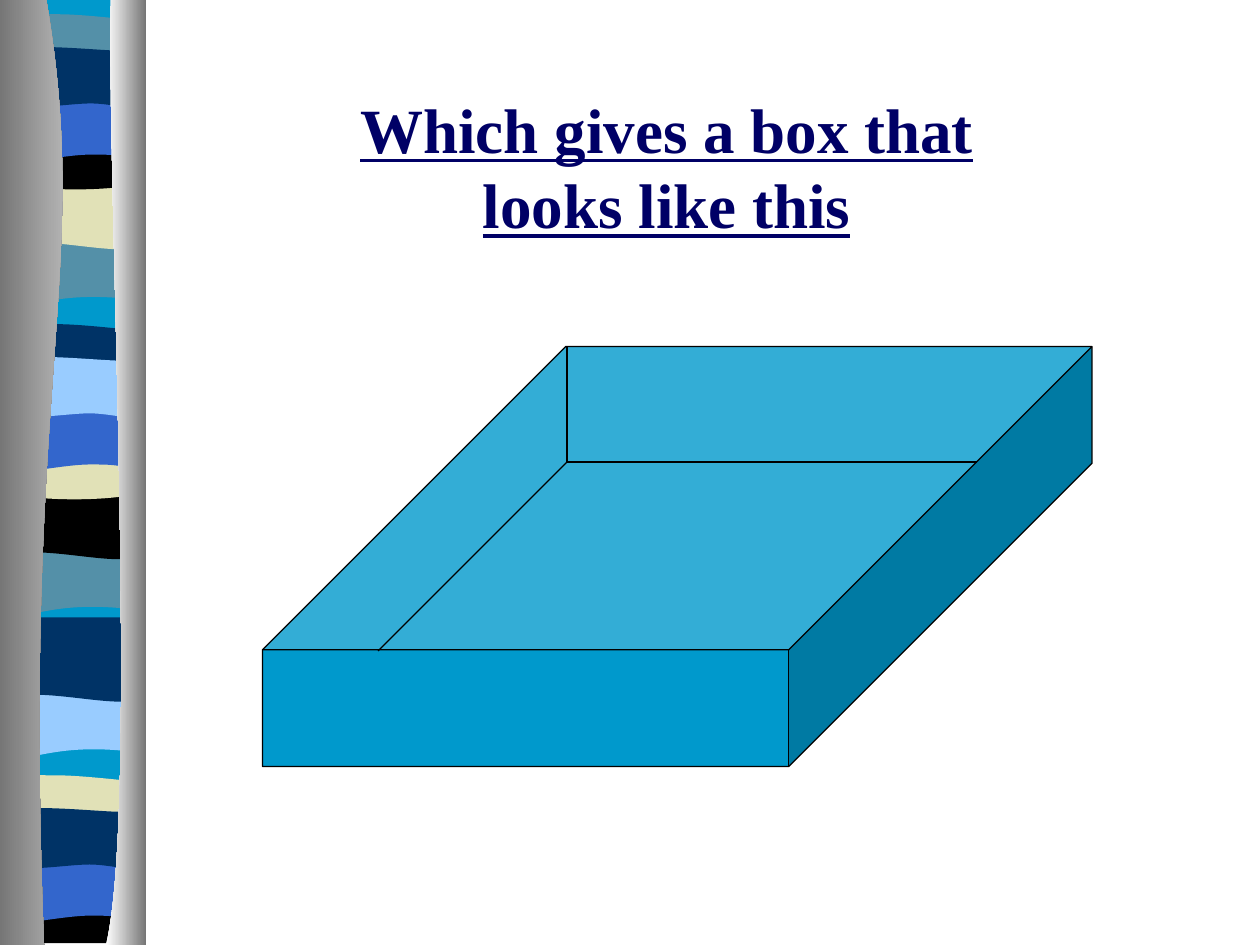
from lxml import etree
from pptx import Presentation
from pptx.dml.color import RGBColor
from pptx.enum.shapes import MSO_CONNECTOR, MSO_SHAPE
from pptx.enum.text import MSO_ANCHOR, MSO_AUTO_SIZE, PP_ALIGN
from pptx.oxml.ns import qn
from pptx.util import Pt

CUBE, STRAIGHT = MSO_SHAPE.CUBE, MSO_CONNECTOR.STRAIGHT
CENTER, TOP = PP_ALIGN.CENTER, MSO_ANCHOR.TOP
GROW = MSO_AUTO_SIZE.SHAPE_TO_FIT_TEXT

COLORS = {
    "cyan": "0099CC", "teal": "5490A8", "sand": "E1E1B7", "black": "000000",
    "blue": "3366CC", "navy": "003366", "sky": "99CCFF", "title": "000066",
    "white": "FFFFFF", "silver": "D0D0D0", "gray": "767676",
}
FONT = "Times New Roman"
SLIDE_W, SLIDE_H = 720, 540
BAND_W = 77.8
BAND_STRETCH = 1.35  # vertical, about the middle of each band

# Band outlines: two numbers are a straight step, six are a Bezier step.
# Each has its offset below the top of its stack.
MOTIFS = {
    "tail": (121.7, [(BAND_W, 0), (BAND_W, 33.8),
                     (23.8, 28.1, 13, 39.6, 0, 33.8), (0, 0)]),
    "ripple": (89.8, [(BAND_W, 0), (BAND_W, 33.8),
                      (64.8, 39.6, 23.8, 29.5, 0, 33.8), (0, 0)]),
    "crest": (0, [(BAND_W, 3.6), (BAND_W, 20.9),
                  (64.8, 24.5, 13, 24.5, 0, 20.9), (0, 3.6),
                  (5, 0, 16.6, 0.7, 29.5, 0.7),
                  (42.5, 0.7, 67.7, 2.9, BAND_W, 3.6)]),
    "bowl": (66, [(BAND_W, 0), (BAND_W, 23),
                  (64.8, 27.4, 13, 27.4, 0, 23), (0, 0),
                  (47.5, 3.6, 61.2, 0, BAND_W, 0)]),
    "arch": (42, [(BAND_W, 0), (BAND_W, 33.8),
                  (65.5, 30.2, 60.5, 30.2, 47.5, 30.2),
                  (34.6, 30.2, 11.5, 33.8, 0, 33.8), (0, 0)]),
    "swell": (17.8, [(BAND_W, 3.6), (BAND_W, 25.9),
                     (72.7, 29.5, 60.5, 25.9, 47.5, 25.9),
                     (34.6, 25.9, 7.9, 29.5, 0, 25.9), (0, 3.6),
                     (10.8, 0, 52.6, 3.6, 65.5, 3.6)]),
}
# left, top, and the colour of each band from back to front
STACKS = [
    (4.3, 11.5, {"tail": "teal", "ripple": "sand", "crest": "teal",
                 "bowl": "black", "arch": "blue", "swell": "navy"}),
    (3.6, 188.6, {"tail": "teal", "ripple": "black", "crest": "navy",
                  "bowl": "sand", "arch": "blue", "swell": "sky"}),
    (4.3, 270, {"tail": "sky", "ripple": "navy"}),
    (3.6, 446.4, {"crest": "sand", "arch": "blue", "swell": "navy"}),
]
BACKDROP = [(BAND_W, 0), (BAND_W, 538.5), (0, 538.5), (0, 0)]
BASE = [(BAND_W, 0), (BAND_W, 26.4), (0, 26.4), (0, 0),
        (47.5, 3.6, 61.2, 0, BAND_W, 0)]
LEFT_PANEL = [(26.5, 0), (53, 155.5, 12.2, 213, 25.2, SLIDE_H),
              (0, SLIDE_H), (0, 0)]
RIGHT_PANEL = [(63.4, 0), (60.5, 90, 79.9, 465, 60.5, SLIDE_H),
               (83.5, SLIDE_H), (83.5, 0)]


def rgb(name):
    return RGBColor.from_string(COLORS[name])


def stretch(steps):
    middle = max(y for step in steps for y in step[1::2]) / 2
    return [tuple(middle + (v - middle) * BAND_STRETCH if i % 2 else v
                  for i, v in enumerate(step)) for step in steps]


def bend(sp, steps):
    """Join each three line segments of a Bezier step into one curve."""
    path = next(sp._element.iter(qn("a:path")))
    segments = iter(path.findall(qn("a:lnTo")))
    for step in steps[1:]:
        segment = next(segments)
        if len(step) == 6:
            curve = etree.Element(qn("a:cubicBezTo"))
            segment.addprevious(curve)
            for part in (segment, next(segments), next(segments)):
                curve.append(part[0])
                path.remove(part)


class Deck:
    def __init__(self):
        self.prs = Presentation()
        self.prs.slide_width, self.prs.slide_height = Pt(SLIDE_W), Pt(SLIDE_H)
        self.slide = None

    def new_slide(self):
        self.slide = self.prs.slides.add_slide(self.prs.slide_layouts[5])

    def title(self, text, left, top, width, height, size):
        sp = self.slide.shapes.title
        sp.left, sp.top, sp.width, sp.height = map(Pt, (left, top, width, height))
        tf = sp.text_frame
        tf.word_wrap, tf.auto_size, tf.vertical_anchor = True, GROW, TOP
        p = tf.paragraphs[0]
        p.alignment, p.line_spacing = CENTER, Pt(1.2 * size)
        r = p.add_run()
        r.text = text
        r.font.name, r.font.size = FONT, Pt(size)
        r.font.bold = r.font.underline = True
        r.font.color.rgb = rgb("title")

    def group(self):
        return self.slide.shapes.add_group_shape()

    def outline(self, group, steps, colors, left=0, top=0):
        """Fill an outline with one colour, or two from left to right."""
        points = [(Pt(left + x), Pt(top + y)) for step in steps
                  for x, y in zip(step[::2], step[1::2])]
        builder = group.shapes.build_freeform(*points[0])
        builder.add_line_segments(points[1:], close=True)
        sp = builder.convert_to_shape()
        bend(sp, steps)
        sp.shadow.inherit = False
        sp.line.fill.background()
        if len(colors) == 1:
            sp.fill.solid()
            sp.fill.fore_color.rgb = rgb(colors[0])
        else:
            sp.fill.gradient()
            sp.fill.gradient_angle = 0
            for stop, color in zip(sp.fill.gradient_stops, colors):
                stop.color.rgb = rgb(color)

    def cube(self, left, top, width, height, depth):
        sp = self.slide.shapes.add_shape(
            CUBE, Pt(left), Pt(top), Pt(width), Pt(height))
        sp.adjustments[0] = depth
        sp.shadow.inherit = False
        sp.fill.solid()
        sp.fill.fore_color.rgb = rgb("cyan")
        self.stroke(sp)

    def line(self, start, end):
        sp = self.slide.shapes.add_connector(
            STRAIGHT, *map(Pt, start), *map(Pt, end))
        self.stroke(sp)
        etree.SubElement(sp._element.spPr, qn("a:effectLst"))

    def stroke(self, sp):
        sp.line.color.rgb = rgb("black")
        sp.line.width = Pt(0.75)


def main():
    deck = Deck()
    deck.new_slide()
    border = deck.group()
    deck.outline(border, BACKDROP, ["cyan"], 4.3)
    deck.outline(border, BASE, ["black"], 3.6, 512.6)
    for left, top, bands in STACKS:
        for motif, color in bands.items():
            offset, steps = MOTIFS[motif]
            deck.outline(border, stretch(steps), [color], left, top + offset)
    deck.outline(border, LEFT_PANEL, ["gray", "silver"])
    deck.outline(border, RIGHT_PANEL, ["white", "gray"])

    deck.cube(150, 198, 474, 240, 0.722)
    inner_corner = (324, 264)
    for end in [(324, 198), (216, 372), (558, 264)]:
        deck.line(inner_corner, end)
    deck.title("Which gives a box that looks like this", 162, 48, 438, 93.6, 36)
    deck.prs.save("out.pptx")


if __name__ == "__main__":
    main()
